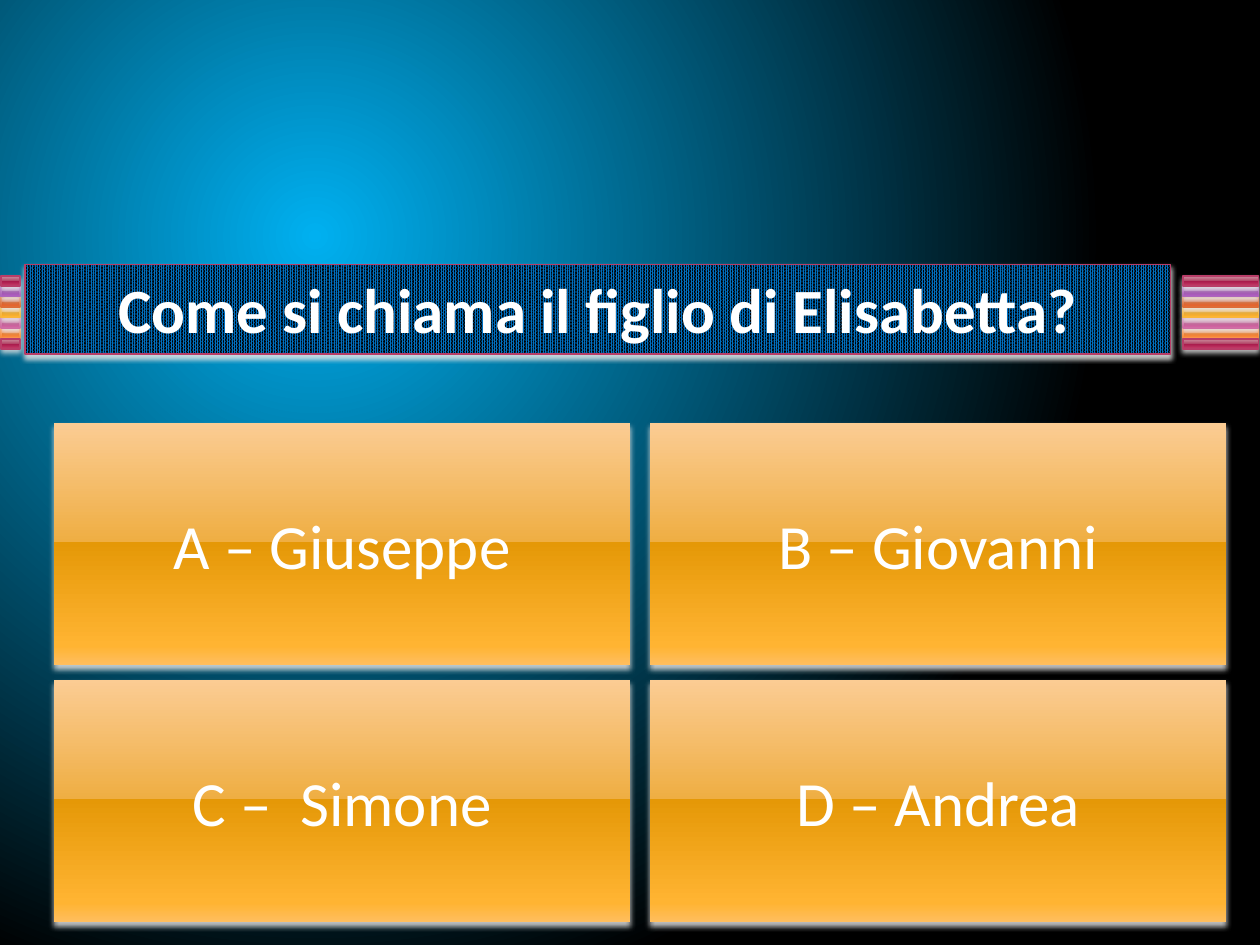
from dataclasses import dataclass
from lxml.etree import SubElement
from pptx import Presentation
from pptx.dml.color import RGBColor as RGB
from pptx.enum.dml import MSO_PATTERN as Pattern
from pptx.enum.shapes import MSO_SHAPE as Kind
from pptx.enum.text import MSO_ANCHOR as Anchor, MSO_AUTO_SIZE as Fit, PP_ALIGN as Align
from pptx.oxml.ns import qn
from pptx.util import Inches, Pt


@dataclass(frozen=True)
class Theme:
    font: str = "Calibri"
    size: int = 36
    text: str = "FFFFFF"
    glow: str = "00B0F0"
    dark: str = "000000"
    blue: str = "0070C0"
    shade: str = "E6E6E6"
    stops: tuple = (0, 49, 49, 92, 100)
    edge: float = 0.9
    # Each gloss: line colour, then the gradient from top to bottom.
    rose: tuple = ("B83D68", "CE94A2", "B34869", "A61749", "C13764", "CA5D7C")
    plum: tuple = ("AC66BB", "C6A2D0", "A666B4", "8F3EA1", "AD5DBF", "BA76CA")
    rust: tuple = ("DE6C36", "E7A493", "D66B42", "CC4809", "E9642C", "F07B55")
    gold: tuple = ("F9B639", "FBCC93", "EFAE43", "E59807", "FFB432", "FFBE5F")
    pink: tuple = ("CF6DA4", "DDA4C1", "C66B9D", "B34181", "D361A0", "DC79AE")
    peach: tuple = ("FA8D3D", "FBB494", "F08745", "E5670B", "FF8736", "FF9961")


THEME = Theme()


def blend(item, stops):
    """Give a gradient fill the (percent, colour) stops; return its XML."""
    grad = item.element.find(".//" + qn("a:gradFill"))
    for child in list(grad):
        grad.remove(child)
    row = SubElement(grad, qn("a:gsLst"))
    for spot, tint in stops:
        stop = SubElement(row, qn("a:gs"), pos=str(spot * 1000))
        SubElement(stop, qn("a:srgbClr"), val=tint)
    return grad


def paint_back(slide):
    slide.background.fill.gradient()
    grad = blend(slide, ((0, THEME.glow), (100, THEME.dark)))
    way = SubElement(grad, qn("a:path"))
    way.set("path", "circle")
    SubElement(way, qn("a:fillToRect"), l="50000", t="50000", r="100000", b="100000")


def add_box(slide, left, top, width, height, edge=None):
    """Add a rectangle with a soft shadow below it."""
    box = slide.shapes.add_shape(Kind.RECTANGLE, *map(Inches, (left, top, width, height)))
    if edge:
        box.line.color.rgb = RGB.from_string(edge)
        box.line.width = Pt(THEME.edge)
    else:
        box.line.fill.background()
    box.shadow.inherit = False
    list_el = box.element.spPr.find(qn("a:effectLst"))
    cast = SubElement(list_el, qn("a:outerShdw"), blurRad=str(Pt(3.1)),
                      dist=str(Pt(2)), dir="5400000", rotWithShape="0")
    tint = SubElement(cast, qn("a:srgbClr"), val=THEME.shade)
    SubElement(tint, qn("a:alpha"), val="83000")
    return box


def gloss(box, tints):
    box.fill.gradient()
    grad = blend(box, zip(THEME.stops, tints[1:]))
    SubElement(grad, qn("a:lin"), ang="5400000", scaled="0")


def write(box, text, bold=False, **frame):
    for name, value in {"word_wrap": True, **frame}.items():
        setattr(box.text_frame, name, value)
    line = box.text_frame.paragraphs[0]
    line.alignment = Align.CENTER
    run = line.add_run()
    run.text = text
    look = {"name": THEME.font, "size": Pt(THEME.size), "bold": bold}
    for name, value in look.items():
        setattr(run.font, name, value)
    run.font.color.rgb = RGB.from_string(THEME.text)


def add_bands(slide, left, width):
    bands = (THEME.rose, THEME.plum, THEME.rust, THEME.gold,
             THEME.pink, THEME.peach, THEME.rose)
    rows = list(enumerate(bands))
    # The upper bands overlap the lower ones; the last one lies on top.
    for row, tints in rows[-2::-1] + rows[-1:]:
        gloss(add_box(slide, left, 2.19 + row * 0.083, width, 0.08, tints[0]), tints)


def add_answers(slide, answers):
    for i, text in enumerate(answers):
        row, col = divmod(i, 2)
        box = add_box(slide, 0.43 + col * 4.73, 3.36 + row * 2.04, 4.57, 1.92)
        gloss(box, THEME.gold)
        write(box, text, vertical_anchor=Anchor.MIDDLE)


def add_question(slide, text):
    box = add_box(slide, 0.2, 2.1, 9.09, 0.71, THEME.rose[0])
    box.fill.patterned()
    box.fill.pattern = Pattern.PERCENT_90
    box.fill.fore_color.rgb = RGB.from_string(THEME.blue)
    box.fill.back_color.rgb = RGB.from_string(THEME.dark)
    write(box, text, bold=True, vertical_anchor=Anchor.TOP,
          auto_size=Fit.SHAPE_TO_FIT_TEXT)


def main():
    deck = Presentation()
    deck.slide_width, deck.slide_height = Inches(10), Inches(7.5)
    slide = deck.slides.add_slide(deck.slide_layouts[6])
    paint_back(slide)
    add_bands(slide, 0.01, 0.15)
    add_bands(slide, 9.39, 0.6)
    add_answers(slide, ("A – Giuseppe", "B – Giovanni", "C –  Simone", "D – Andrea"))
    add_question(slide, "Come si chiama il figlio di Elisabetta?")
    deck.save("out.pptx")


if __name__ == "__main__":
    main()
